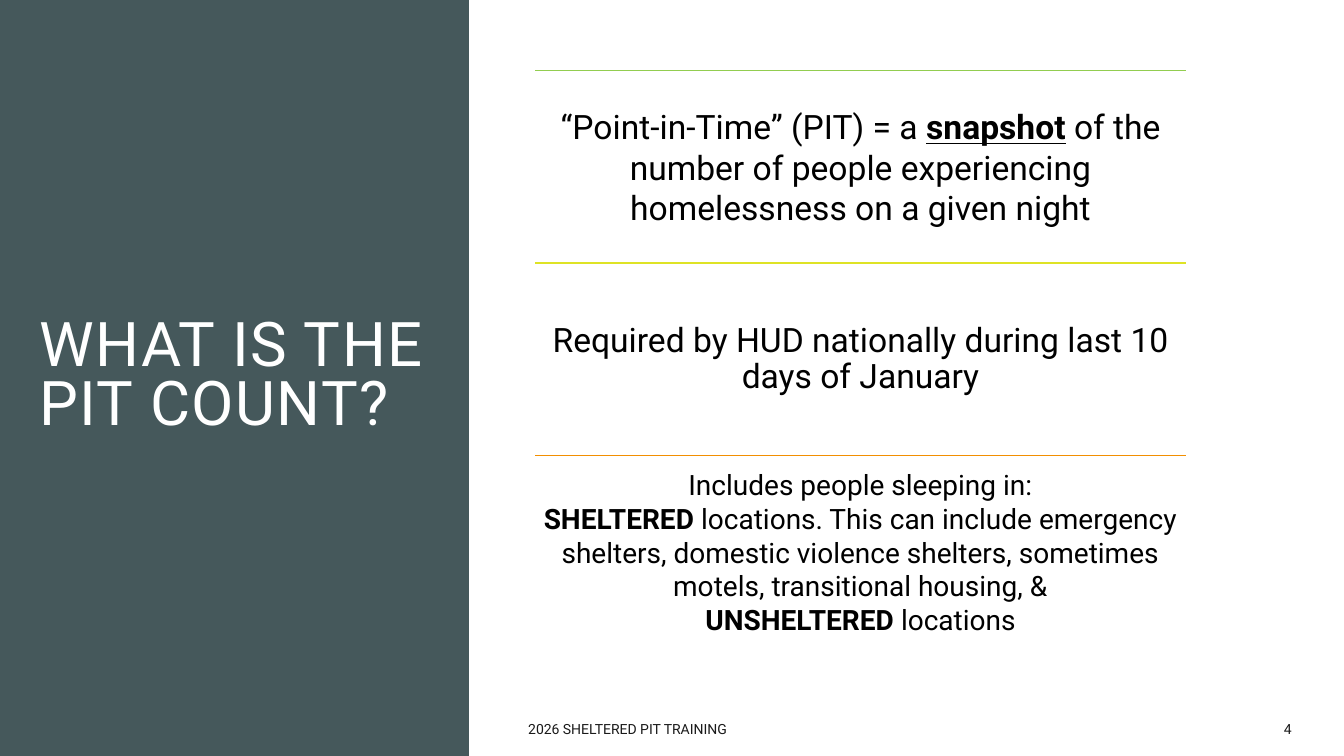
"""Build the slide that explains what the PIT count is."""
import pptx
import pptx.dml.color
import pptx.enum.shapes
import pptx.enum.text
import pptx.oxml
import pptx.oxml.ns
import pptx.util

Inches = pptx.util.Inches
Pt = pptx.util.Pt
RGBColor = pptx.dml.color.RGBColor
ALIGN = pptx.enum.text.PP_ALIGN
MIDDLE = pptx.enum.text.MSO_ANCHOR.MIDDLE

SLATE = RGBColor(0x45, 0x58, 0x5B)
WHITE = RGBColor(0xFF, 0xFF, 0xFF)
BLACK = RGBColor(0x00, 0x00, 0x00)
CHARCOAL = RGBColor(0x1A, 0x1A, 0x1A)
GREEN = RGBColor(0x92, 0xCD, 0x50)
LIME = RGBColor(0xDE, 0xE3, 0x25)
ORANGE = RGBColor(0xF2, 0x8F, 0x01)

PLAIN = {}
BOLD = {"bold": True}
STRESSED = {"bold": True, "underline": True}

HEADING = [[("WHAT IS THE PIT COUNT?", PLAIN)]]
FACTS = [
    (GREEN, 24, 1.0, [
        [("“Point-in-Time” (PIT) = a ", PLAIN), ("snapshot", STRESSED),
         (" of the number of people experiencing homelessness on a given night", PLAIN)],
    ]),
    (LIME, 24, 0.9, [
        [("Required by HUD nationally during last 10 days of January", PLAIN)],
    ]),
    (ORANGE, 20, 1.0, [
        [("Includes people sleeping in:", PLAIN)],
        [("SHELTERED", BOLD),
         (" locations. This can include emergency shelters, domestic violence shelters, "
          "sometimes motels, transitional housing, &", PLAIN)],
        [("UNSHELTERED ", BOLD), ("locations", PLAIN)],
    ]),
]
FOOTERS = [
    ("2026 SHELTERED PIT TRAINING", 5.14, 6.45, ALIGN.LEFT),
    ("4", 11.85, 1.06, ALIGN.RIGHT),
]

FACT_LEFT, FACT_TOP, FACT_WIDTH, FACT_HEIGHT = 5.31, 0.7, 6.45, 1.91
FACT_INSET = 0.08


def assign(target, values):
    """Set each named attribute of the target."""
    for name, value in values.items():
        setattr(target, name, value)


def write(frame, paragraphs, size, color, align, spacing=1.0):
    """Fill a text frame with paragraphs of formatted runs."""
    assign(frame, {"word_wrap": True, "vertical_anchor": MIDDLE,
                   "auto_size": pptx.enum.text.MSO_AUTO_SIZE.NONE})
    for index, pieces in enumerate(paragraphs):
        paragraph = frame.add_paragraph() if index else frame.paragraphs[0]
        assign(paragraph, {"alignment": align, "line_spacing": spacing})
        for text, emphasis in pieces:
            run = paragraph.add_run()
            run.text = text
            assign(run.font, {"name": "Roboto", "size": Pt(size), **emphasis})
            run.font.color.rgb = color


def add_panel_and_heading(slide):
    """Place the dark side panel with the heading in front of it."""
    panel = slide.shapes.add_shape(
        pptx.enum.shapes.MSO_SHAPE.RECTANGLE, 0, 0, Inches(4.65), Inches(7.5))
    panel.shadow.inherit = False
    panel.fill.solid()
    panel.fill.fore_color.rgb = SLATE
    panel.line.fill.background()

    heading = slide.shapes.title
    heading.element.addprevious(panel.element)
    assign(heading, {"left": Inches(0.29), "top": Inches(1.45),
                     "width": Inches(4.02), "height": Inches(4.6)})
    write(heading.text_frame, HEADING, 44, WHITE, ALIGN.LEFT, 0.8)
    heading.text_frame.paragraphs[0].runs[0].font._element.set("spc", "100")


def add_fact(slide, index, color, size, spacing, paragraphs):
    """Add one fact below its coloured rule."""
    left, width = Inches(FACT_LEFT), Inches(FACT_WIDTH)
    top, height = Inches(FACT_TOP + index * FACT_HEIGHT), Inches(FACT_HEIGHT)
    rule = slide.shapes.add_connector(
        pptx.enum.shapes.MSO_CONNECTOR.STRAIGHT, left, top, left + width, top)
    rule.line.color.rgb = color
    rule.line.width = Pt(1.25)
    rule.element.spPr.append(pptx.oxml.parse_xml(
        f"<a:effectLst {pptx.oxml.ns.nsdecls('a')}/>"))

    fact = slide.shapes.add_textbox(left, top, width, height).text_frame
    assign(fact, {f"margin_{side}": Inches(FACT_INSET)
                  for side in ("left", "top", "right", "bottom")})
    write(fact, paragraphs, size, BLACK, ALIGN.CENTER, spacing)


def main():
    """Build and save the presentation."""
    deck = pptx.Presentation()
    assign(deck, {"slide_width": Inches(13.33), "slide_height": Inches(7.5)})
    slide = deck.slides.add_slide(deck.slide_layouts.get_by_name("Title Only"))
    add_panel_and_heading(slide)
    for index, fact in enumerate(FACTS):
        add_fact(slide, index, *fact)
    for text, left, width, align in FOOTERS:
        footer = slide.shapes.add_textbox(
            Inches(left), Inches(7.08), Inches(width), Inches(0.3))
        write(footer.text_frame, [[(text, PLAIN)]], 10, CHARCOAL, align)
    deck.save("out.pptx")


if __name__ == "__main__":
    main()
